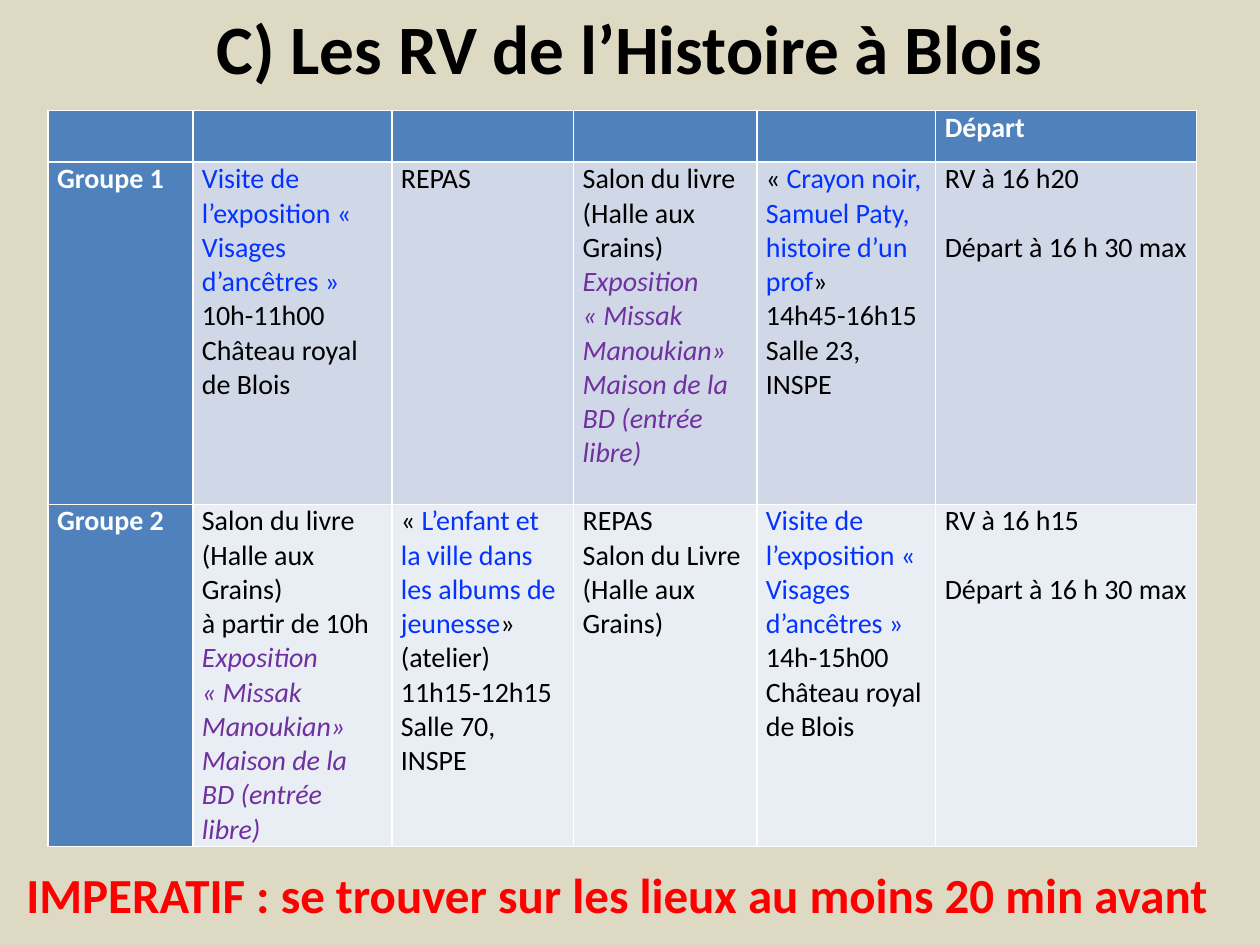
from dataclasses import dataclass

from pptx import Presentation
from pptx.dml.color import RGBColor
from pptx.enum.text import MSO_ANCHOR, PP_ALIGN
from pptx.util import Pt

MID = MSO_ANCHOR.MIDDLE
CENTER = PP_ALIGN.CENTER


@dataclass(frozen=True)
class Theme:
    face: str = "Calibri"
    back: str = "DDD9C3"
    head: str = "4F81BD"
    bands: tuple = ("D0D8E8", "E9EDF4")
    black: str = "000000"
    white: str = "FFFFFF"
    blue: str = "0432FF"
    purple: str = "7030A0"
    red: str = "FF0000"
    title: float = 39.6
    cell: float = 16
    note: float = 28
    gap: float = 19.5


T = Theme()
WIDTHS = (82.8, 113.7, 103.9, 104.7, 102.2, 149.2)
HEIGHTS = (29.5, 195.5, 195.5)


# Each cell is a list of lines: plain text, or text with a style
def visit(time):
    return [("Visite de l’exposition « Visages d’ancêtres »", "blue"),
            time, "Château royal de Blois"]


def talk(name, *rest):
    return [("« ", name, "»"), *rest]


def leave(time):
    return [f"RV à {time}", ("Départ à 16 h 30 max", "gap")]


SHOW = [(line, "purple") for line in (
    "Exposition", "« Missak Manoukian»", "Maison de la BD (entrée libre)")]
FAIR = ["Salon du livre", "(Halle aux Grains)"]

ROWS = [
    [[], [], [], [], [], ["Départ"]],
    [["Groupe 1"],
     visit("10h-11h00"),
     ["REPAS"],
     FAIR + SHOW,
     talk("Crayon noir, Samuel Paty, histoire d’un prof",
          "14h45-16h15", "Salle 23, INSPE"),
     leave("16 h20")],
    [["Groupe 2"],
     FAIR + ["à partir de 10h"] + SHOW,
     talk("L’enfant et la ville dans les albums de jeunesse",
          "(atelier)", "11h15-12h15", "Salle 70, INSPE"),
     ["REPAS", "Salon du Livre (Halle aux Grains)"],
     visit("14h-15h00"),
     leave("16 h15")],
]


def paint(fill, color):
    fill.solid()
    fill.fore_color.rgb = RGBColor.from_string(color)


def style(font, size, color, bold=False):
    font.name, font.size, font.bold = T.face, Pt(size), bold
    font.color.rgb = RGBColor.from_string(color)


def place(shape, left, top, width, height):
    shape.left, shape.top = Pt(left), Pt(top)
    shape.width, shape.height = Pt(width), Pt(height)


def add_line(para, line, color, bold):
    if isinstance(line, str):
        line = (line, "")
    if len(line) == 3:
        # Quoted name in blue between black marks
        for text, tint in zip(line, (color, T.blue, color)):
            run = para.add_run()
            run.text = text
            style(run.font, T.cell, tint, bold)
        return
    text, kind = line
    para.add_run().text = text
    tint = {"blue": T.blue, "purple": T.purple}.get(kind, color)
    style(para.font, T.cell, tint, bold)
    if kind == "purple":
        para.font.italic = True
    if kind == "gap":
        para.space_before = Pt(T.gap)


def fill_cell(cell, lines, fill, color, bold):
    paint(cell.fill, fill)
    cell.margin_left = cell.margin_right = Pt(5.2)
    cell.margin_top = cell.margin_bottom = 0
    frame = cell.text_frame
    for i, line in enumerate(lines):
        para = frame.add_paragraph() if i else frame.paragraphs[0]
        add_line(para, line, color, bold)


def add_title(slide, text):
    title = slide.shapes.title
    place(title, 36, 3.6, 648, 46)
    frame = title.text_frame
    frame.text = text
    frame.vertical_anchor = MID
    para = frame.paragraphs[0]
    para.alignment = CENTER
    style(para.font, T.title, T.black, True)


def add_plan(slide):
    table = slide.shapes.add_table(
        len(ROWS), len(WIDTHS), Pt(27.4), Pt(63.2),
        Pt(sum(WIDTHS)), Pt(sum(HEIGHTS))).table
    table.first_col = True
    for col, width in zip(table.columns, WIDTHS):
        col.width = Pt(width)
    for r, (row, height) in enumerate(zip(ROWS, HEIGHTS)):
        table.rows[r].height = Pt(height)
        for c, lines in enumerate(row):
            head = r == 0 or c == 0
            fill = T.head if head else T.bands[r - 1]
            color = T.white if head else T.black
            fill_cell(table.cell(r, c), lines, fill, color, head)


def add_note(slide, text):
    box = slide.shapes.add_textbox(Pt(8), Pt(490.3), Pt(704), Pt(41))
    box.text_frame.text = text
    style(box.text_frame.paragraphs[0].font, T.note, T.red, True)


def main():
    deck = Presentation()
    deck.slide_width, deck.slide_height = Pt(720), Pt(540)
    slide = deck.slides.add_slide(deck.slide_layouts.get_by_name("Title Only"))
    paint(slide.background.fill, T.back)

    # Heading, timetable, reminder
    add_title(slide, "C) Les RV de l’Histoire à Blois")
    add_plan(slide)
    add_note(slide, "IMPERATIF : se trouver sur les lieux au moins 20 min avant")

    deck.save("out.pptx")


if __name__ == "__main__":
    main()
